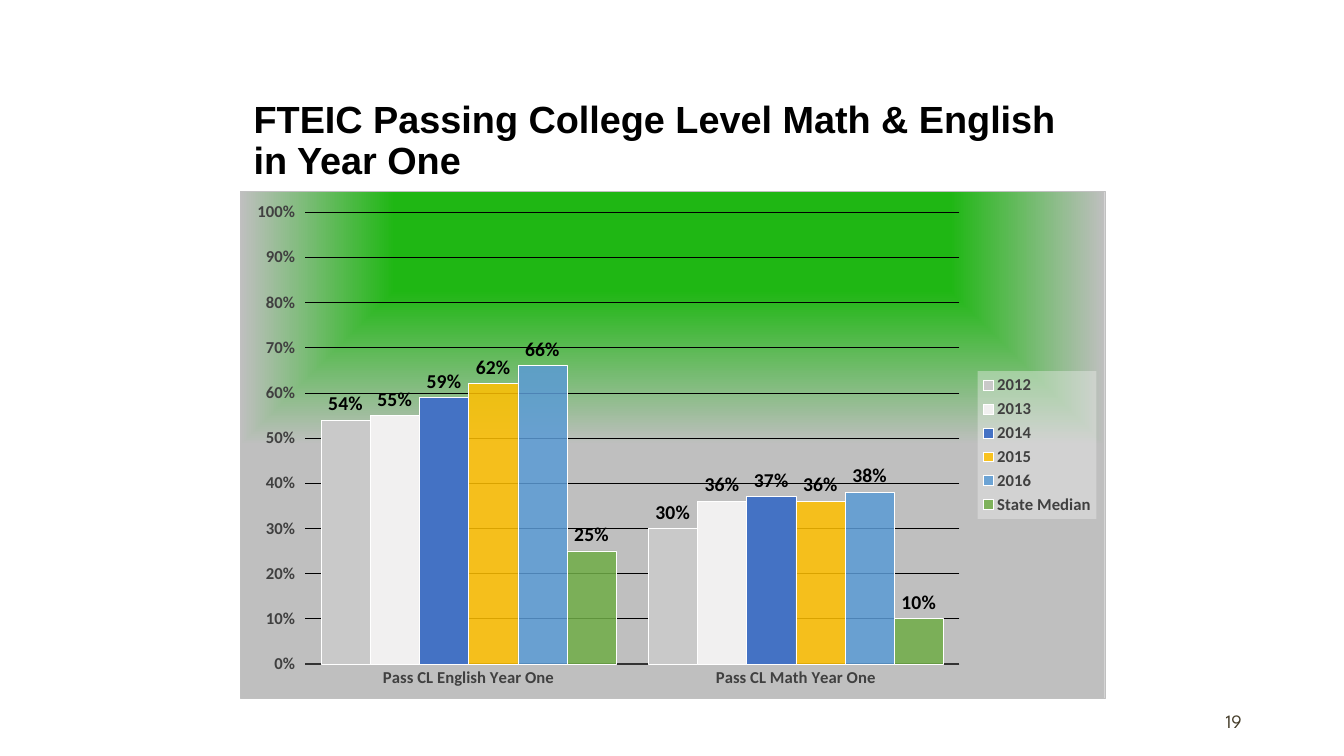
from lxml import etree
from pptx import Presentation
from pptx.chart.data import CategoryChartData
from pptx.dml.color import RGBColor
from pptx.enum.chart import XL_CHART_TYPE, XL_LABEL_POSITION, XL_LEGEND_POSITION, XL_TICK_MARK
from pptx.enum.text import MSO_ANCHOR, MSO_AUTO_SIZE, PP_ALIGN
from pptx.oxml import parse_xml
from pptx.oxml.ns import nsdecls, qn
from pptx.util import Pt

CLUSTERED = XL_CHART_TYPE.COLUMN_CLUSTERED
OUTSIDE_END = XL_LABEL_POSITION.OUTSIDE_END
LEGEND_RIGHT = XL_LEGEND_POSITION.RIGHT
NO_TICK = XL_TICK_MARK.NONE
TICK_OUT = XL_TICK_MARK.OUTSIDE
MIDDLE = MSO_ANCHOR.MIDDLE
NO_AUTOFIT = MSO_AUTO_SIZE.NONE
LEFT, RIGHT = PP_ALIGN.LEFT, PP_ALIGN.RIGHT

COLOURS = {
    "black": "000000", "white": "FFFFFF", "axis text": "404040",
    "axis line": "333333", "page number": "443C29", "frame": "C0C0C0",
    "green": "1FB714", "grey": "BFBFBF", "legend": "F2F2F2",
    "2012": "C9C9C9", "2013": "F1F0F0", "2014": "4472C4",
    "2015": "FFC000", "2016": "5B9BD5", "State Median": "70AD47",
}
PASS_RATES = {
    "2012": (0.54, 0.30), "2013": (0.55, 0.36), "2014": (0.59, 0.37),
    "2015": (0.62, 0.36), "2016": (0.66, 0.38), "State Median": (0.25, 0.10),
}
OPACITY = {"2015": 85, "2016": 85, "State Median": 85}
COURSES = ("Pass CL English Year One", "Pass CL Math Year One")
PLOT_AREA = {"x": 0.075, "y": 0.04, "w": 0.757, "h": 0.892}


def colour(name):
    return RGBColor.from_string(COLOURS[name])


def set_font(font, family="Calibri", size=11.9, ink="axis text", bold=True):
    font.name = family
    font.size = Pt(size)
    font.bold = bold
    font.color.rgb = colour(ink)


def write_text(frame, text, align=LEFT, spacing=None, **font_format):
    frame.word_wrap = True
    frame.auto_size = NO_AUTOFIT
    frame.vertical_anchor = MIDDLE
    paragraph = frame.paragraphs[0]
    paragraph.alignment = align
    paragraph.line_spacing = spacing
    run = paragraph.add_run()
    run.text = text
    set_font(run.font, **font_format)


def set_line(line, ink, width):
    line.color.rgb = colour(ink)
    line.width = Pt(width)


def set_opacity(colour_element, percent):
    etree.SubElement(colour_element, qn("a:alpha")).set("val", str(percent * 1000))


def put_background(parent, inner_xml):
    background = parse_xml(f'<c:spPr {nsdecls("c", "a")}>{inner_xml}</c:spPr>')
    parent.find(qn("c:txPr")).addprevious(background)


class PassRateSlide:
    def __init__(self, presentation):
        self.slide = presentation.slides.add_slide(presentation.slide_layouts[5])

    def title(self, text, left, top, width, height):
        heading = self.slide.shapes.title
        heading.left, heading.top = Pt(left), Pt(top)
        heading.width, heading.height = Pt(width), Pt(height)
        write_text(heading.text_frame, text, spacing=0.9,
                   family="Arial", size=27, ink="black")

    def page_number(self, text, left, top, width, height):
        number = self.slide.shapes.add_textbox(Pt(left), Pt(top), Pt(width), Pt(height))
        write_text(number.text_frame, text, align=RIGHT, family="League Spartan",
                   size=13.5, ink="page number", bold=False)

    def column_chart(self, left, top, width, height):
        data = CategoryChartData(number_format="0%")
        data.categories = COURSES
        for name, rates in PASS_RATES.items():
            data.add_series(name, rates)
        chart = self.slide.shapes.add_chart(
            CLUSTERED, Pt(left), Pt(top), Pt(width), Pt(height), data).chart
        set_font(chart.font, size=10, ink="black", bold=False)
        chart.has_title = False
        plot = chart.plots[0]
        plot.gap_width = 65
        plot.overlap = 0
        plot.vary_by_categories = False
        for series in plot.series:
            self.style_series(series)
        self.style_axes(chart)
        self.style_legend(chart)
        self.style_background(chart)

    def style_series(self, series):
        series.invert_if_negative = False
        series.format.fill.solid()
        series.format.fill.fore_color.rgb = colour(series.name)
        if series.name in OPACITY:
            set_opacity(next(series._element.iter(qn("a:srgbClr"))), OPACITY[series.name])
        set_line(series.format.line, "white", 0.25)
        labels = series.data_labels
        labels.show_value = True
        labels.position = OUTSIDE_END
        labels.number_format = "0%"
        labels.number_format_is_linked = False
        set_font(labels.font, size=14, ink="black")

    def style_axes(self, chart):
        courses, rates = chart.category_axis, chart.value_axis
        for axis, tick in ((courses, NO_TICK), (rates, TICK_OUT)):
            axis.major_tick_mark = tick
            axis.minor_tick_mark = NO_TICK
            set_font(axis.tick_labels.font)
        set_line(courses.format.line, "axis line", 1)
        rates.format.line.fill.background()
        rates.minimum_scale, rates.maximum_scale, rates.major_unit = 0, 1, 0.1
        rates.tick_labels.number_format = "0%"
        rates.tick_labels.number_format_is_linked = False
        rates.has_major_gridlines = True
        set_line(rates.major_gridlines.format.line, "black", 0.25)

    def style_legend(self, chart):
        chart.has_legend = True
        legend = chart.legend
        legend.position = LEGEND_RIGHT
        legend.include_in_layout = False
        set_font(legend.font)
        put_background(legend._element, (
            f'<a:solidFill><a:srgbClr val="{COLOURS["legend"]}">'
            '<a:alpha val="39000"/></a:srgbClr></a:solidFill><a:ln><a:noFill/></a:ln>'))

    def style_background(self, chart):
        stops = "".join(
            f'<a:gs pos="{position * 1000}"><a:srgbClr val="{COLOURS[name]}"/></a:gs>'
            for position, name in ((0, "green"), (39, "green"), (100, "grey")))
        put_background(chart._chartSpace, (
            f'<a:gradFill><a:gsLst>{stops}</a:gsLst><a:path path="rect">'
            '<a:fillToRect l="50000" t="-80000" r="50000" b="180000"/></a:path></a:gradFill>'
            f'<a:ln w="{Pt(0.25)}"><a:solidFill><a:srgbClr val="{COLOURS["frame"]}"/>'
            '</a:solidFill></a:ln>'))
        plot_area = next(chart._chartSpace.iter(qn("c:plotArea")))
        for layout in plot_area.findall(qn("c:layout")):
            plot_area.remove(layout)
        modes = '<c:xMode val="edge"/><c:yMode val="edge"/>'
        sizes = "".join(f'<c:{key} val="{share}"/>' for key, share in PLOT_AREA.items())
        plot_area.insert(0, parse_xml(
            f'<c:layout {nsdecls("c")}><c:manualLayout><c:layoutTarget val="inner"/>'
            f'{modes}{sizes}</c:manualLayout></c:layout>'))


def main():
    presentation = Presentation()
    presentation.slide_width, presentation.slide_height = Pt(960), Pt(540)
    page = PassRateSlide(presentation)
    page.title("FTEIC Passing College Level Math & English in Year One", 174, 67.5, 612, 67.5)
    page.page_number("19", 678, 500.5, 216, 28.75)
    page.column_chart(171.4, 136.8, 617.8, 362.2)
    presentation.save("out.pptx")


if __name__ == "__main__":
    main()
